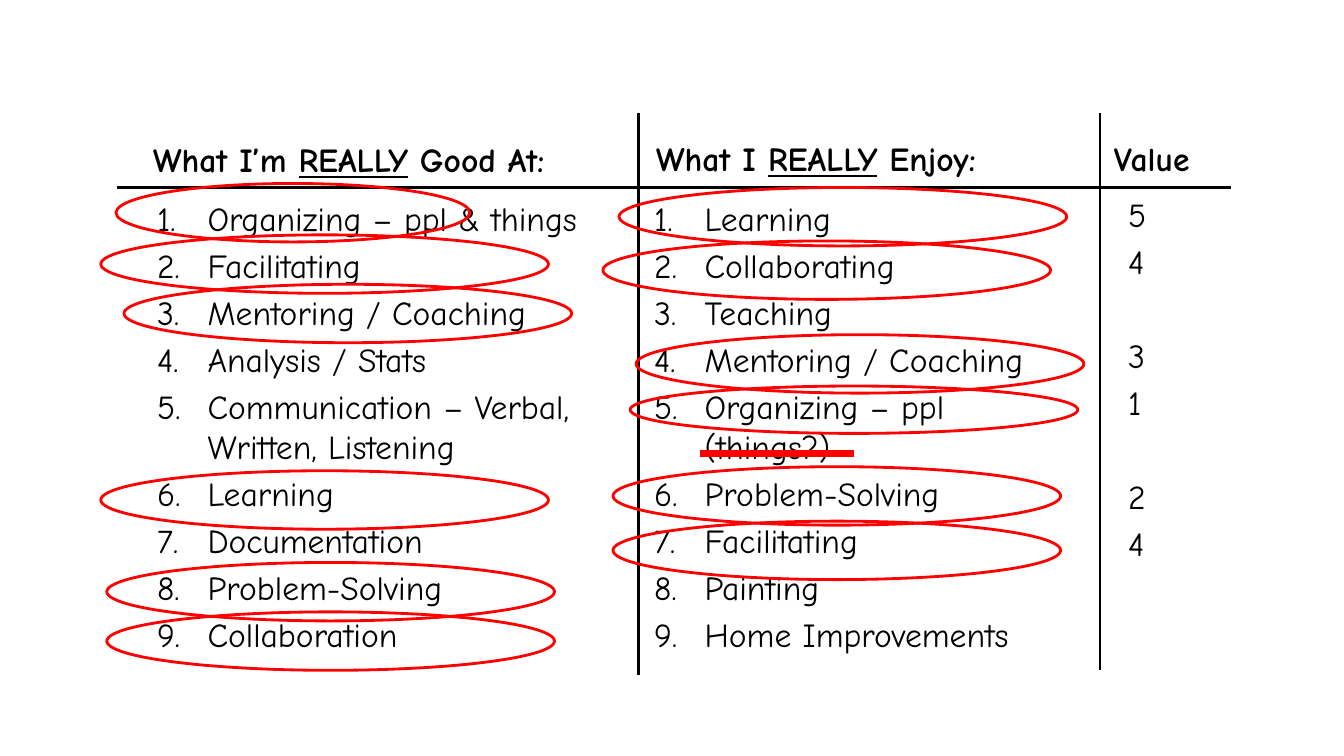
from lxml.etree import SubElement
from pptx import Presentation
from pptx.dml.color import RGBColor
from pptx.enum.shapes import MSO_CONNECTOR, MSO_SHAPE
from pptx.enum.text import MSO_ANCHOR
from pptx.oxml.ns import qn
from pptx.util import Pt

PX = 9144  # EMU per px, 100 px to the inch
BLACK = RGBColor(0, 0, 0)
RED = RGBColor(255, 0, 0)
FONT = "Comic Neue"
SIZE = 24
GAP = 4.8  # points before each paragraph
ROW = 33.6  # points from one row to the next


class Sheet:
    def __init__(self, page):
        self.shapes = page.shapes

    def box(self, left, top, width, height, anchor=MSO_ANCHOR.TOP, wrap=True):
        box = self.shapes.add_textbox(left * PX, top * PX, width * PX, height * PX)
        frame = box.text_frame
        frame.word_wrap = wrap
        frame.vertical_anchor = anchor
        return frame

    def style(self, para, before=GAP, bold=False):
        para.font.name = FONT
        para.font.size = Pt(SIZE)
        para.font.color.rgb = BLACK
        para.font.bold = bold
        para.space_before = Pt(before)

    def heading(self, left, top, width, height, *spans, wrap=True):
        """Write bold spans; every second one is underlined."""
        para = self.box(left, top, width, height, MSO_ANCHOR.BOTTOM, wrap).paragraphs[0]
        self.style(para, bold=True)
        for index, text in enumerate(spans):
            span = para.add_run()
            span.text = text
            if index % 2:
                span.font.underline = True

    def rows(self, left, top, width, height, items, numbered=False):
        """Write one paragraph per item; None leaves a row open."""
        frame = self.box(left, top, width, height)
        para = frame.paragraphs[0]
        before = GAP
        for item in items:
            if item is None:
                before += ROW
                continue
            if para.text:
                para = frame.add_paragraph()
            para.text = item
            self.style(para, before)
            before = GAP
            if numbered:
                properties = para._p.get_or_add_pPr()
                properties.set("marL", str(50 * PX))
                properties.set("indent", str(-50 * PX))
                SubElement(properties, qn("a:buAutoNum"), type="arabicPeriod")

    def line(self, x1, y1, x2, y2, color=BLACK, weight=2):
        line = self.shapes.add_connector(
            MSO_CONNECTOR.STRAIGHT, x1 * PX, y1 * PX, x2 * PX, y2 * PX)
        line.line.color.rgb = color
        line.line.width = Pt(weight)
        SubElement(line._element.spPr, qn("a:effectLst"))

    def ring(self, left, top, width=444, height=58):
        ring = self.shapes.add_shape(
            MSO_SHAPE.OVAL, left * PX, top * PX, width * PX, height * PX)
        ring.shadow.inherit = False
        ring.fill.background()
        ring.line.color.rgb = RED
        ring.line.width = Pt(2)


GOOD_AT = ["Organizing – ppl & things", "Facilitating", "Mentoring / Coaching",
           "Analysis / Stats", "Communication – Verbal, Written, Listening",
           "Learning", "Documentation", "Problem-Solving", "Collaboration"]
ENJOY = ["Learning", "Collaborating", "Teaching", "Mentoring / Coaching",
         "Organizing – ppl\v(things?)", "Problem-Solving", "Facilitating",
         "Painting", "Home Improvements"]
VALUES = ["5", "4", None, "3", "1", None, "2", "4"]

RINGS_GOOD_AT = [(115, 182, 351), (100, 233), (123, 282), (100, 467),
                 (106, 558), (106, 607)]
RINGS_ENJOY = [(614, 186), (598, 239), (631, 332), (625, 383, 444, 47),
               (608, 463), (608, 517)]


def main():
    deck = Presentation()
    deck.slide_width = 1333 * PX
    deck.slide_height = 750 * PX
    sheet = Sheet(deck.slides.add_slide(deck.slide_layouts[6]))

    # Headings
    sheet.heading(142, 113, 514, 70, "What I’m ", "REALLY", " Good At:")
    sheet.heading(641, 112, 433, 70, "What I ", "REALLY", " Enjoy:")
    sheet.heading(1095, 132, 107, 50, "Value", wrap=False)

    # Lists
    sheet.rows(146, 191, 479, 479, GOOD_AT, numbered=True)
    sheet.rows(639, 191, 442, 479, ENJOY, numbered=True)
    sheet.rows(1109, 187, 90, 479, VALUES)

    # Rules between the columns and under the headings
    sheet.line(633, 112, 633, 670)
    sheet.line(1091, 112, 1091, 665)
    sheet.line(116, 186, 1221, 186)

    # Marks on the matching entries
    for ring in RINGS_GOOD_AT + RINGS_ENJOY:
        sheet.ring(*ring)
    sheet.line(694, 450, 847, 450, RED, 5)

    deck.save("out.pptx")


if __name__ == "__main__":
    main()
